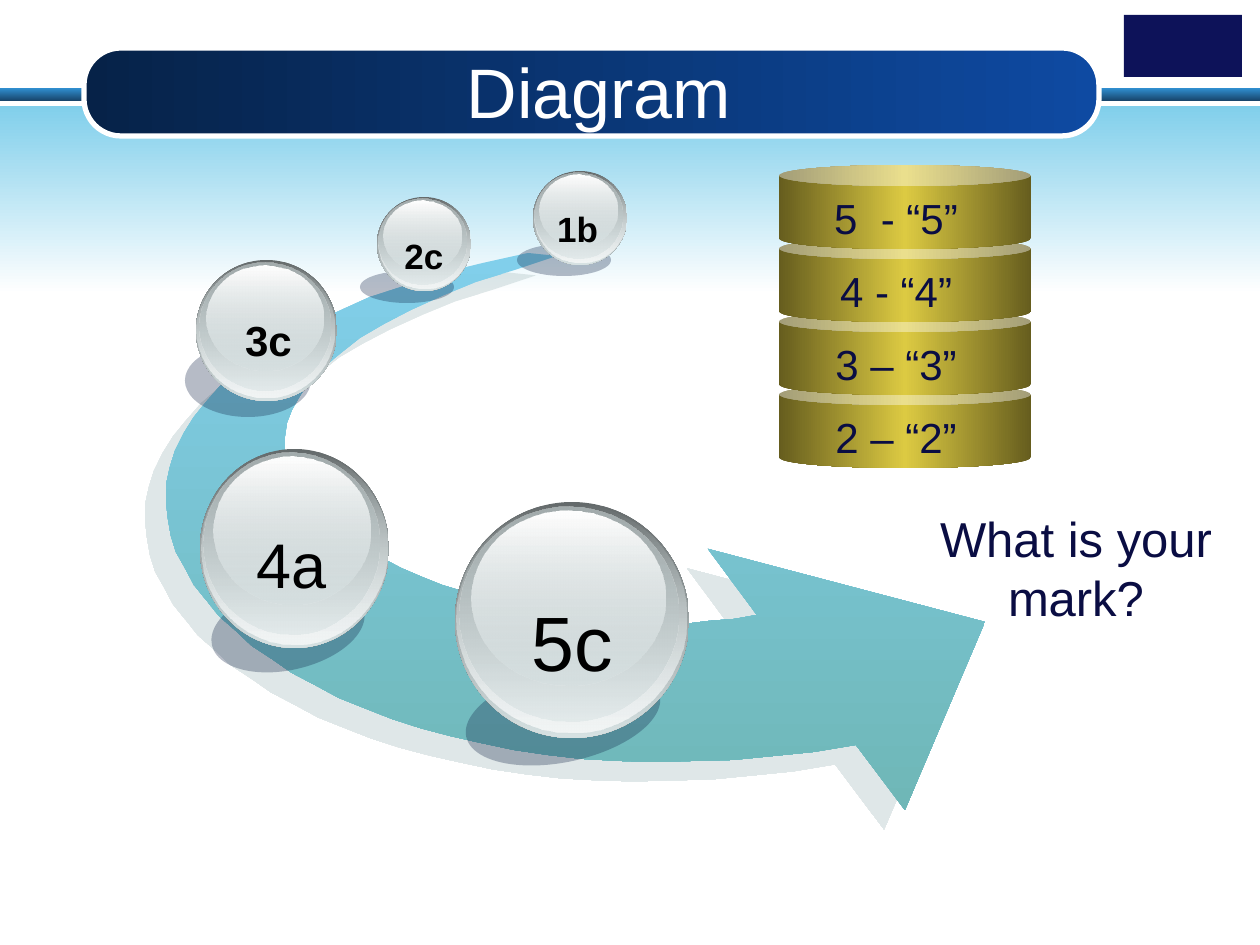
"""Build a diagram slide with a curved arrow, glass balls and a stack of marks."""
from dataclasses import dataclass
from typing import Any, NamedTuple

from lxml.etree import SubElement
from pptx import Presentation
from pptx.dml.color import RGBColor
from pptx.enum.shapes import MSO_SHAPE
from pptx.enum.text import MSO_ANCHOR, MSO_AUTO_SIZE, PP_ALIGN
from pptx.oxml.ns import qn
from pptx.util import Pt

SCALE = 914400 / 126


class Box(NamedTuple):
    x: int
    y: int
    w: int
    h: int


class Stop(NamedTuple):
    pos: int
    color: str
    alpha: int = 100


class Ball(NamedTuple):
    text: str
    size: int
    bold: bool
    frame: Box
    shade: Box
    turn: float
    label: Box


class Ring(NamedTuple):
    left: float
    top: float
    wide: float
    high: float
    stops: tuple[Stop, ...]


@dataclass(frozen=True)
class Theme:
    font: str = "Arial"
    ink: str = "0A0D43"
    navy: str = "0D1259"
    black: str = "000000"
    white: str = "FFFFFF"
    shade: str = "0F2145"
    cast: str = "C1D1D3"
    stripe: tuple = (Stop(0, "3191D3"), Stop(100, "17446A"))
    sky: tuple = (Stop(0, "81CFEB"), Stop(100, "FFFFFF"))
    banner: tuple = (Stop(0, "062248"), Stop(100, "0E4AA2"))
    gold: tuple = (Stop(0, "665D1E"), Stop(50, "DCCA42"), Stop(100, "665D1E"))
    arrow: tuple = (Stop(0, "81CFEB"), Stop(100, "6FB7B7"))
    title: int = 40
    ask: int = 28
    mark: int = 24


THEME = Theme()

RINGS = (
    Ring(0, 0, 1, 1, (Stop(0, "646A6B"), Stop(100, "D6E1E2"))),
    Ring(0.01, 0.01, 0.98, 0.97, (Stop(0, "D6E1E2", 0), Stop(100, "F2F5F5"))),
    Ring(0.02, 0.02, 0.93, 0.91, (Stop(0, "A4ADAE"), Stop(100, "D6E1E2", 48))),
    Ring(0.07, 0.04, 0.83, 0.74, (Stop(0, "FFFFFF"), Stop(100, "D6E1E2", 38))),
)

BALLS = (
    Ball("5c", 44, False, Box(455, 502, 234, 236), Box(464, 670, 198, 92), -12.1, Box(519, 588, 107, 106)),
    Ball("4a", 36, False, Box(200, 449, 189, 199), Box(210, 586, 156, 84), -12.9, Box(244, 519, 96, 89)),
    Ball("3c", 24, True, Box(196, 260, 141, 141), Box(185, 344, 126, 73), 0, Box(232, 308, 73, 63)),
    Ball("2c", 20, True, Box(377, 197, 94, 94), Box(360, 271, 94, 32), 0, Box(392, 228, 64, 55)),
    Ball("1b", 20, True, Box(533, 171, 94, 94), Box(517, 244, 94, 32), 0, Box(541, 201, 73, 55)),
)

MARKS = ("5  - “5”", "4 - “4”", "3 – “3”", "2 – “2”")

OUTER = (
    (528, 253), (483, 263), (442, 273), (404, 286), (370, 297), (339, 311), (310, 324),
    (284, 339), (260, 354), (239, 369), (222, 384), (207, 401), (194, 417), (184, 433),
    (175, 451), (170, 467), (166, 485), (166, 501), (168, 519), (171, 536), (176, 552),
    (185, 568), (194, 585), (207, 601), (219, 616), (236, 631), (252, 646), (272, 659),
    (292, 673), (315, 685), (339, 698), (364, 708), (392, 719), (420, 728), (450, 736),
    (481, 743), (514, 750), (548, 755), (582, 759), (619, 761), (655, 762), (694, 761),
    (733, 760), (774, 756), (814, 752), (856, 745),
)
HEAD = ((905, 810), (985, 622), (708, 549), (757, 615))
INNER = (
    (735, 619), (709, 621), (685, 624), (660, 624), (635, 622), (610, 621), (585, 619),
    (559, 615), (536, 611), (512, 606), (488, 600), (465, 592), (442, 585), (422, 577),
    (401, 568), (382, 558), (364, 548), (349, 537), (334, 527), (320, 514), (310, 503),
    (300, 490), (294, 476), (289, 464), (285, 451), (285, 437), (287, 423), (292, 410),
    (300, 396), (310, 381), (324, 367), (341, 353), (360, 338), (384, 324), (411, 310),
    (442, 296), (476, 282), (515, 270), (557, 256),
)


def emu(px: float) -> int:
    return round(px * SCALE)


def apply(item: Any, values: dict[str, Any]) -> None:
    for name, value in values.items():
        setattr(item, name, value)


def tint(node: Any, color: str, alpha: int) -> None:
    shade = SubElement(node, qn("a:srgbClr"), val=color)
    if alpha < 100:
        SubElement(shade, qn("a:alpha"), val=str(alpha * 1000))


def paint(shape: Any, stops: tuple[Stop, ...], angle: int = 90) -> None:
    shape.shadow.inherit = False
    shape.line.fill.background()
    shape.fill.gradient()
    shape.fill.gradient_angle = -angle % 360
    group = shape._element.spPr.find(".//" + qn("a:gsLst"))
    group.clear()
    for stop in stops:
        node = SubElement(group, qn("a:gs"), pos=str(stop.pos * 1000))
        tint(node, stop.color, stop.alpha)


def flat(shape: Any, color: str, alpha: int = 100) -> None:
    shape.shadow.inherit = False
    shape.line.fill.background()
    shape.fill.solid()
    fill = shape._element.spPr.find(qn("a:solidFill"))
    fill.clear()
    tint(fill, color, alpha)


def place(slide: Any, kind: MSO_SHAPE, box: Box, turn: float = 0) -> Any:
    shape = slide.shapes.add_shape(kind, *map(emu, box))
    shape.rotation = turn
    return shape


def write(slide: Any, text: str, box: Box, size: int, color: str = THEME.ink,
          bold: bool = False, wrap: bool = False, anchor: MSO_ANCHOR = MSO_ANCHOR.TOP) -> None:
    frame = slide.shapes.add_textbox(*map(emu, box)).text_frame
    fit = MSO_AUTO_SIZE.NONE if anchor == MSO_ANCHOR.MIDDLE else MSO_AUTO_SIZE.SHAPE_TO_FIT_TEXT
    apply(frame, {"word_wrap": wrap, "auto_size": fit, "vertical_anchor": anchor})
    line = frame.paragraphs[0]
    line.alignment = PP_ALIGN.CENTER
    run = line.add_run()
    run.text = text
    apply(run.font, {"name": THEME.font, "size": Pt(size), "bold": bold})
    run.font.color.rgb = RGBColor.from_string(color)


def draw_back(slide: Any) -> None:
    paint(place(slide, MSO_SHAPE.RECTANGLE, Box(0, 88, 1260, 13)), THEME.stripe)
    paint(place(slide, MSO_SHAPE.RECTANGLE, Box(0, 106, 1260, 188)), THEME.sky)
    banner = place(slide, MSO_SHAPE.ROUNDED_RECTANGLE, Box(84, 48, 1015, 88))
    banner.adjustments[0] = 0.42
    paint(banner, THEME.banner, 0)
    banner.line.color.rgb = RGBColor.from_string(THEME.white)
    banner.line.width = Pt(3)
    flat(place(slide, MSO_SHAPE.RECTANGLE, Box(1124, 15, 118, 62)), THEME.navy)
    write(slide, "Diagram", Box(116, 52, 966, 78), THEME.title, THEME.white, wrap=True,
          anchor=MSO_ANCHOR.MIDDLE)


def draw_arrow(slide: Any) -> None:
    start, *rest = OUTER + HEAD + INNER
    pen = slide.shapes.build_freeform(*start, scale=SCALE)
    pen.add_line_segments(rest, close=True)
    arrow = pen.convert_to_shape()
    paint(arrow, THEME.arrow)
    effects = arrow._element.spPr.find(qn("a:effectLst"))
    cast = SubElement(effects, qn("a:outerShdw"), blurRad="0", dist=str(Pt(16.3)),
                      dir=str(137 * 60000), algn="ctr", rotWithShape="0")
    tint(cast, THEME.cast, 50)


def draw_ball(slide: Any, ball: Ball) -> None:
    flat(place(slide, MSO_SHAPE.OVAL, ball.shade, ball.turn), THEME.shade, 30)
    x, y, w, h = ball.frame
    for ring in RINGS:
        box = Box(round(x + ring.left * w), round(y + ring.top * h), round(ring.wide * w), round(ring.high * h))
        paint(place(slide, MSO_SHAPE.OVAL, box), ring.stops)
    write(slide, ball.text, ball.label, ball.size, THEME.black, ball.bold)


def draw_marks(slide: Any) -> None:
    tops = [165 + 73 * row for row in range(len(MARKS))]
    for top in reversed(tops):
        paint(place(slide, MSO_SHAPE.CAN, Box(779, top, 252, 84)), THEME.gold, 0)
    for top, mark in zip(tops, MARKS):
        write(slide, mark, Box(806, top + 21, 180, 63), THEME.mark)


def main() -> None:
    deck = Presentation()
    apply(deck, {"slide_width": emu(1260), "slide_height": emu(945)})
    slide = deck.slides.add_slide(deck.slide_layouts[6])
    draw_back(slide)
    draw_arrow(slide)
    write(slide, "What is your mark?", Box(892, 502, 368, 131), THEME.ask, wrap=True)
    for ball in BALLS:
        draw_ball(slide, ball)
    draw_marks(slide)
    deck.save("out.pptx")


if __name__ == "__main__":
    main()
